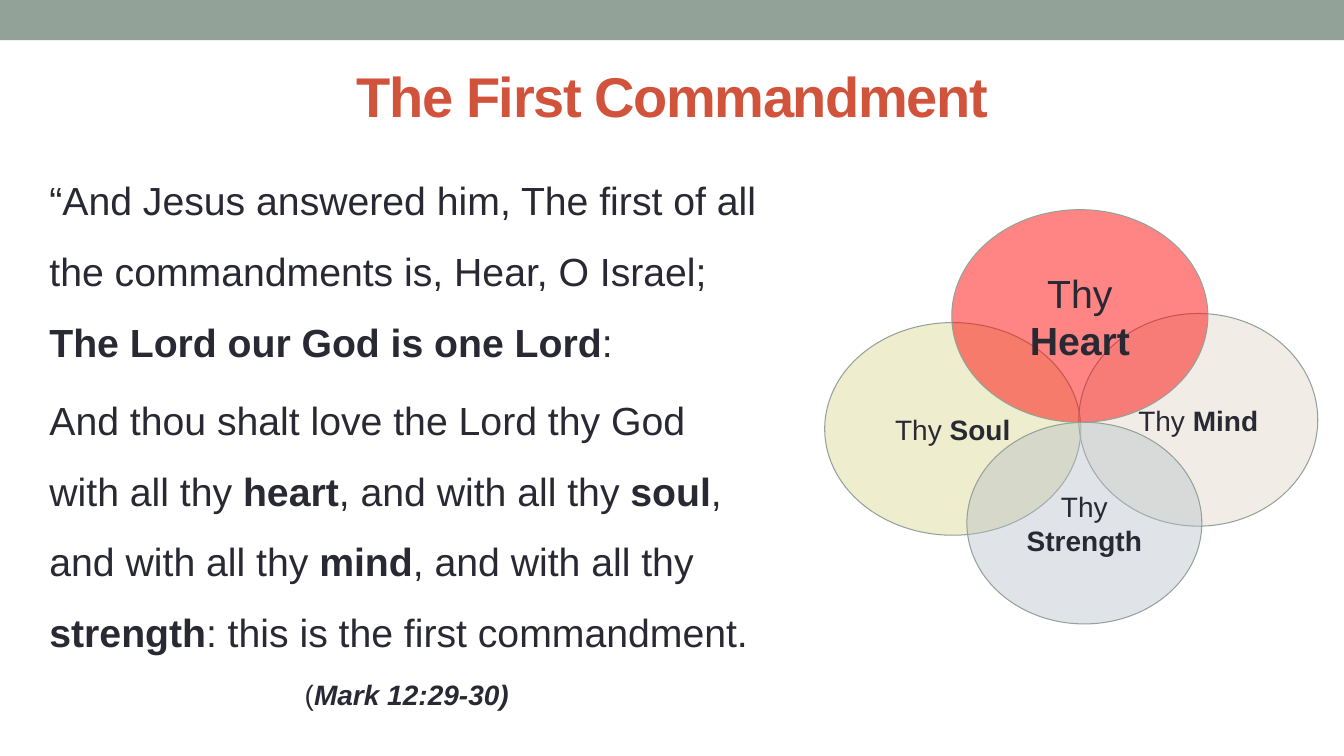
import pptx
import pptx.util
import pptx.dml.color
import pptx.enum.shapes
import pptx.enum.text
import pptx.oxml.ns
from lxml import etree

Inches, Pt = pptx.util.Inches, pptx.util.Pt
qn = pptx.oxml.ns.qn
Align = pptx.enum.text.PP_ALIGN
Anchor = pptx.enum.text.MSO_ANCHOR
Shape = pptx.enum.shapes.MSO_SHAPE

COLORS = {
    "sage": "93A299", "rust": "D2533C", "ink": "292934", "olive": "D5D286",
    "sand": "DED2C2", "slate": "B3BBC6", "red": "FF0000",
}

VERSE = [
    "“And Jesus answered him, The first of all the commandments is, Hear, "
    "O Israel; *The Lord our God is one Lord*:",
    "And thou shalt love the Lord thy God with all thy *heart*, and with all "
    "thy *soul*, and with all thy *mind*, and with all thy *strength*: "
    "this is the first commandment.",
]

# label, left, top, width, height, colour, opacity in percent, text size
OVALS = [
    ("Thy *Soul*", 8.18, 3.2, 2.54, 2.11, "olive", 40, 20),
    ("Thy *Mind*", 10.7, 3.11, 2.37, 2.11, "sand", 40, 20),
    ("Thy *Strength*", 9.59, 4.19, 2.33, 2, "slate", 40, 20),
    ("Thy *Heart*", 9.44, 2.08, 2.54, 2.11, "red", 48, 28),
]


def color(name):
    return pptx.dml.color.RGBColor.from_string(COLORS[name])


def place(shape, left, top, width, height):
    shape.left, shape.top = Inches(left), Inches(top)
    shape.width, shape.height = Inches(width), Inches(height)


def write(para, text, size=28, hue="ink", align=Align.LEFT, lead=None,
          before=0, italic=False, track=None):
    """Fill a paragraph; text between asterisks is bold, or bold italic."""
    props = para._p.get_or_add_pPr()
    props.set("marL", "0")
    props.set("indent", "0")
    etree.SubElement(props, qn("a:buNone"))
    para.alignment = align
    para.space_before = Pt(before)
    if lead:
        para.line_spacing = lead
    for i, part in enumerate(text.split("*")):
        if not part:
            continue
        run = para.add_run()
        run.text = part
        font = run.font
        font.name, font.size = "Arial", Pt(size)
        font.bold = i % 2 == 1
        font.italic = italic and font.bold
        font.color.rgb = color(hue)
        if track:
            run._r.get_or_add_rPr().set("spc", str(track))


def add_shape(slide, kind, box, hue, alpha=100):
    shape = slide.shapes.add_shape(kind, *map(Inches, box))
    shape.shadow.inherit = False
    shape.fill.solid()
    shape.fill.fore_color.rgb = color(hue)
    if alpha < 100:
        tint = shape.fill._xPr.find(qn("a:solidFill"))[0]
        etree.SubElement(tint, qn("a:alpha"), val=str(alpha * 1000))
    return shape


def add_band(slide):
    band = add_shape(slide, Shape.RECTANGLE, (0, 0, 13.33, 0.4), "sage")
    band.line.fill.background()


def add_title(slide):
    title = slide.shapes.title
    place(title, 2.17, 0.4, 9, 1.08)
    frame = title.text_frame
    frame.vertical_anchor = Anchor.MIDDLE
    write(frame.paragraphs[0], "*The First Commandment*", size=40,
          hue="rust", align=Align.CENTER, track=-100)


def add_verse(slide):
    body = slide.placeholders[1]
    place(body, 0.39, 1.47, 7.29, 5.59)
    frame = body.text_frame
    frame.auto_size = pptx.enum.text.MSO_AUTO_SIZE.NONE
    first, second = VERSE
    write(frame.paragraphs[0], first, lead=1.5)
    write(frame.add_paragraph(), second, lead=1.5, before=5.6)
    write(frame.add_paragraph(), "(*Mark 12:29-30)*", size=20,
          align=Align.CENTER, lead=1.5, before=4, italic=True)


def add_oval(slide, label, left, top, width, height, hue, alpha, size):
    oval = add_shape(slide, Shape.OVAL, (left, top, width, height), hue, alpha)
    oval.line.color.rgb = color("sage")
    oval.line.width = Pt(0.75)
    frame = oval.text_frame
    frame.word_wrap = True
    frame.vertical_anchor = Anchor.MIDDLE
    write(frame.paragraphs[0], label, size=size, align=Align.CENTER)


def main():
    deck = pptx.Presentation()
    deck.slide_width, deck.slide_height = Inches(13.33), Inches(7.5)
    slide = deck.slides.add_slide(deck.slide_layouts[1])
    add_band(slide)
    add_title(slide)
    add_verse(slide)
    for oval in OVALS:
        add_oval(slide, *oval)
    deck.save("out.pptx")


if __name__ == "__main__":
    main()
